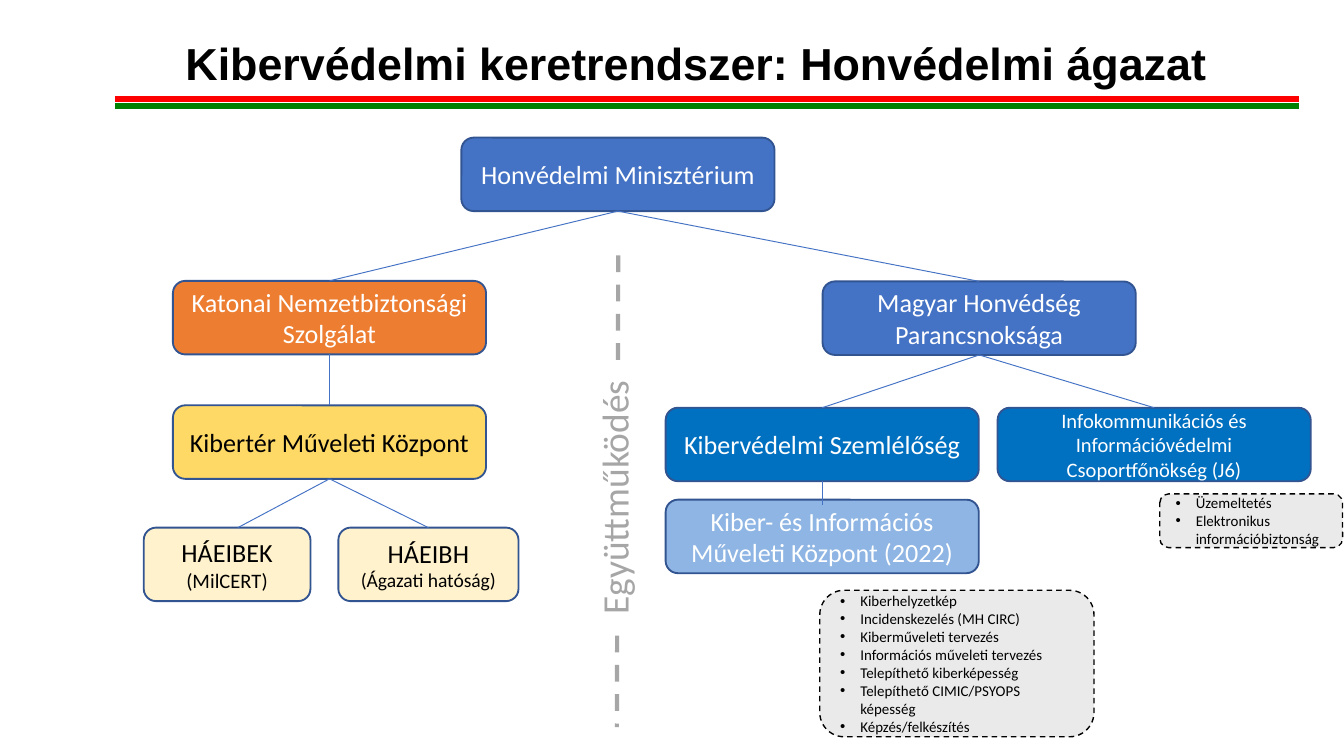
from dataclasses import dataclass
from typing import Optional

from lxml import etree
from pptx import Presentation, util as u
from pptx.dml.color import RGBColor
from pptx.enum import dml, shapes, text
from pptx.oxml.ns import qn


@dataclass(frozen=True)
class Theme:
    heading_font: str = "Arial"
    body_font: str = "Calibri"
    black: str = "000000"
    white: str = "FFFFFF"
    red: str = "FF0000"
    green: str = "008000"
    blue: str = "4472C4"
    outline: str = "325491"
    deep_blue: str = "0070C0"
    pale_blue: str = "8EB5E3"
    orange: str = "ED7D31"
    yellow: str = "FFD966"
    cream: str = "FFF2CC"
    grey: str = "A6A6A6"
    note_fill: str = "D9D9D9"
    title: float = 24
    divider: float = 20
    unit: float = 14
    detail: float = 11
    small_detail: float = 10.5
    task: float = 8


@dataclass(frozen=True)
class Unit:
    """A box of the chart, placed by its centre column and top row."""
    name: str
    center: float
    top: float
    fill: str
    ink: str = Theme.white
    width: float = 23.3
    size: float = Theme.unit
    detail: str = ""
    detail_size: float = Theme.detail
    parent: Optional[str] = None
    link_shift: tuple[float, float] = (0, 0)  # link end, from the top centre


@dataclass(frozen=True)
class TaskNote:
    left: float
    top: float
    width: float
    height: float
    tasks: tuple[str, ...]


T = Theme()
SLIDE_WIDTH = u.Inches(10)
SLIDE_HEIGHT = SLIDE_WIDTH * 9 // 16
CELL = SLIDE_WIDTH // 100  # square grid, 100 columns wide
UNIT_ROWS = 5.47

MINISTRY = "Honvédelmi Minisztérium"
SECURITY = "Katonai Nemzetbiztonsági Szolgálat"
COMMAND = "Magyar Honvédség Parancsnoksága"
CYBERSPACE = "Kibertér Műveleti Központ"
INSPECTORATE = "Kibervédelmi Szemlélőség"

UNITS = [
    Unit(MINISTRY, 45.98, 10.24, T.blue),
    Unit(SECURITY, 24.52, 20.9, T.orange, parent=MINISTRY),
    Unit(COMMAND, 72.86, 20.94, T.blue, parent=MINISTRY),
    Unit(CYBERSPACE, 24.52, 30.16, T.yellow, T.black, parent=SECURITY),
    Unit("HÁEIBEK ", 16.9, 39.26, T.cream, T.black, 12.4, detail="(MilCERT)",
         parent=CYBERSPACE, link_shift=(0.8, 0)),
    Unit("HÁEIBH ", 31.88, 39.26, T.cream, T.black, 13.4,
         detail="(Ágazati hatóság)", detail_size=T.small_detail, parent=CYBERSPACE),
    Unit(INSPECTORATE, 61.18, 30.34, T.deep_blue, parent=COMMAND),
    Unit("Infokommunikációs és Információvédelmi Csoportfőnökség (J6)",
         85.88, 30.34, T.deep_blue, size=T.detail, parent=COMMAND),
    Unit("Kiber- és Információs Műveleti Központ (2022)",
         61.18, 37.18, T.pale_blue, parent=INSPECTORATE, link_shift=(0, 0.4)),
]

NOTES = [
    TaskNote(86.3, 36.75, 13.6, 4, ("Üzemeltetés", "Elektronikus információbiztonság")),
    TaskNote(61, 43.92, 20.4, 10.9, (
        "Kiberhelyzetkép", "Incidenskezelés (MH CIRC)", "Kiberműveleti tervezés",
        "Információs műveleti tervezés", "Telepíthető kiberképesség",
        "Telepíthető CIMIC/PSYOPS képesség", "Képzés/felkészítés")),
]


def grid(*cells: float) -> list[int]:
    return [round(cell * CELL) for cell in cells]


def write(paragraph, words: str, *, size: float, color: str,
          font: str = T.body_font, bold: bool = False, align=None) -> None:
    if align is not None:
        paragraph.alignment = align
    run = paragraph.add_run()
    run.text = words
    run.font.name, run.font.size, run.font.bold = font, u.Pt(size), bold
    run.font.color.rgb = RGBColor.from_string(color)


def add_bullet(paragraph) -> None:
    props = paragraph._p.get_or_add_pPr()
    props.set("marL", str(u.Inches(0.15)))
    props.set("indent", str(-u.Inches(0.15)))
    etree.SubElement(props, qn("a:buFont")).set("typeface", "Arial")
    etree.SubElement(props, qn("a:buChar")).set("char", "•")


def draw_line(slide, start: tuple[float, float], end: tuple[float, float],
              color: str, weight: float, dash=None) -> None:
    line = slide.shapes.add_connector(
        shapes.MSO_CONNECTOR.STRAIGHT, *grid(*start, *end))
    line.line.color.rgb = RGBColor.from_string(color)
    line.line.width = u.Pt(weight)
    if dash is not None:
        line.line.dash_style = dash
    etree.SubElement(line._element.spPr, qn("a:effectLst"))


def draw_box(slide, left: float, top: float, width: float, height: float, *,
             fill: str, outline: str, weight: float):
    box = slide.shapes.add_shape(
        shapes.MSO_SHAPE.ROUNDED_RECTANGLE, *grid(left, top, width, height))
    box.shadow.inherit = False
    box.fill.solid()
    box.fill.fore_color.rgb = RGBColor.from_string(fill)
    box.line.color.rgb = RGBColor.from_string(outline)
    box.line.width = u.Pt(weight)
    box.text_frame.word_wrap = True
    box.text_frame.vertical_anchor = text.MSO_ANCHOR.MIDDLE
    return box


def draw_unit(slide, unit: Unit) -> None:
    box = draw_box(slide, unit.center - unit.width / 2, unit.top, unit.width,
                   UNIT_ROWS, fill=unit.fill, outline=T.outline, weight=1)
    label = box.text_frame.paragraphs[0]
    write(label, unit.name, size=unit.size, color=unit.ink, align=text.PP_ALIGN.CENTER)
    if unit.detail:
        write(label, unit.detail, size=unit.detail_size, color=unit.ink)


def draw_link(slide, parent: Unit, child: Unit) -> None:
    across, down = child.link_shift
    draw_line(slide, (parent.center, parent.top + UNIT_ROWS),
              (child.center + across, child.top + down), T.blue, 0.5)


def draw_note(slide, note: TaskNote) -> None:
    box = draw_box(slide, note.left, note.top, note.width, note.height,
                   fill=T.note_fill, outline=T.black, weight=0.75)
    box.line.dash_style = dml.MSO_LINE.DASH
    tint = box._element.spPr.find(qn("a:solidFill"))[0]
    etree.SubElement(tint, qn("a:alpha")).set("val", "54000")
    frame = box.text_frame
    for index, task in enumerate(note.tasks):
        item = frame.add_paragraph() if index else frame.paragraphs[0]
        add_bullet(item)
        write(item, task, size=T.task, color=T.black, align=text.PP_ALIGN.LEFT)


def draw_title(slide, words: str) -> None:
    title = slide.shapes.title
    title.left, title.top, title.width, title.height = grid(12.8, 2.15, 79.7, 5)
    title.text_frame.word_wrap = True
    title.text_frame.vertical_anchor = text.MSO_ANCHOR.TOP
    write(title.text_frame.paragraphs[0], words, size=T.title, color=T.black,
          font=T.heading_font, bold=True, align=text.PP_ALIGN.LEFT)


def draw_divider(slide, words: str) -> None:
    draw_line(slide, (46, 19), (45.9, 54.1), T.grey, 2.25, dml.MSO_LINE.DASH)
    label = slide.shapes.add_textbox(*grid(35.8, 34.6, 19.8, 4.4))
    label.rotation = 270
    label.fill.solid()
    label.fill.fore_color.rgb = RGBColor.from_string(T.white)
    label.text_frame.word_wrap = False
    write(label.text_frame.paragraphs[0], words, size=T.divider, color=T.grey)


def main() -> None:
    deck = Presentation()
    deck.slide_width, deck.slide_height = SLIDE_WIDTH, SLIDE_HEIGHT
    slide = deck.slides.add_slide(deck.slide_layouts[5])

    # Heading with its two-colour rule
    for row, color in ((7.37, T.red), (7.88, T.green)):
        draw_line(slide, (8.54, row), (96.62, row), color, 3)
    draw_title(slide, "Kibervédelmi keretrendszer: Honvédelmi ágazat")

    # Organisation chart, each unit tied to its parent
    by_name = {unit.name: unit for unit in UNITS}
    for unit in UNITS:
        draw_unit(slide, unit)
    for unit in UNITS:
        if unit.parent:
            draw_link(slide, by_name[unit.parent], unit)

    # Cooperation line between the two branches
    draw_divider(slide, "Együttműködés")

    # Task lists
    for note in NOTES:
        draw_note(slide, note)

    deck.save("out.pptx")


if __name__ == "__main__":
    main()
